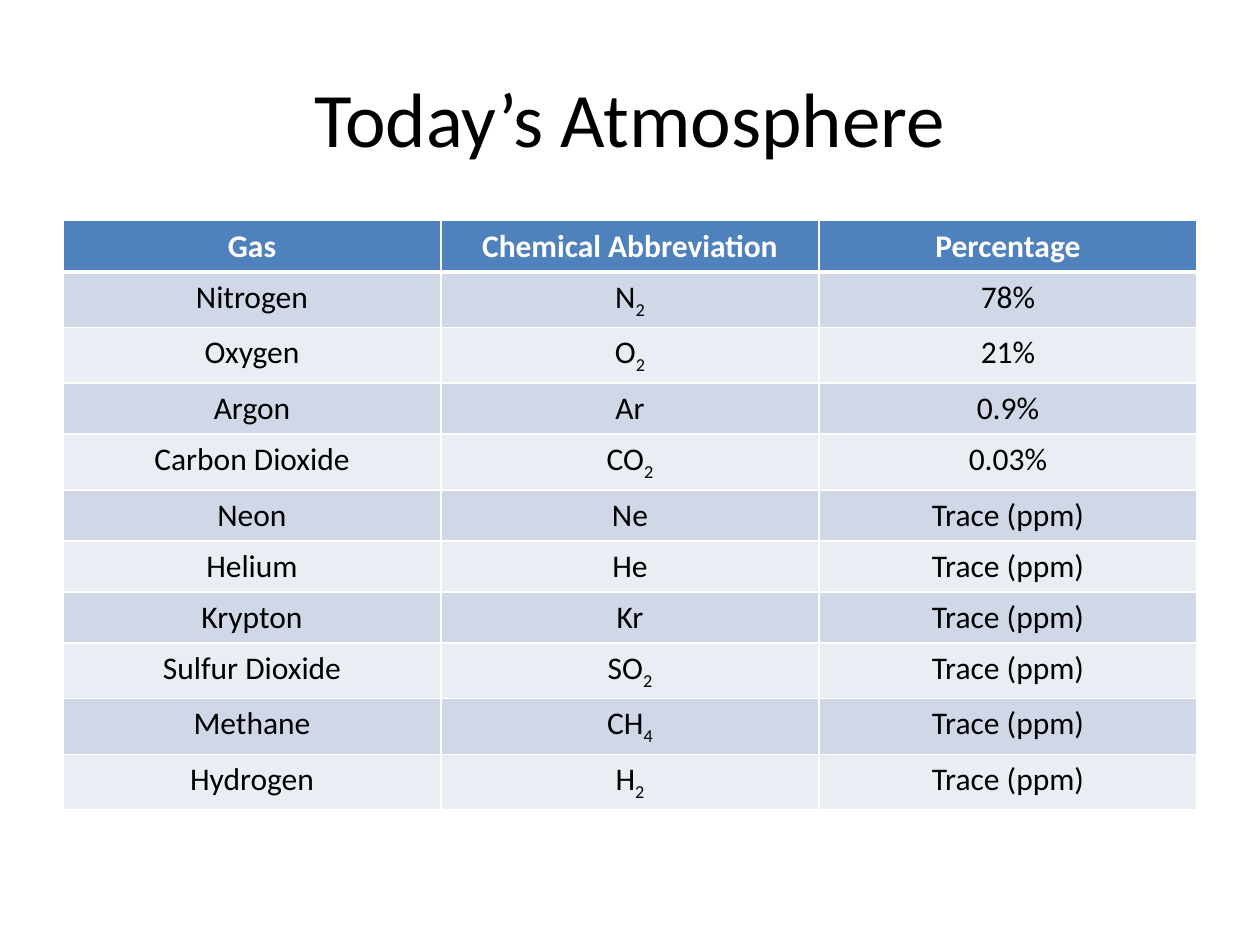
from itertools import groupby

from lxml import etree
from pptx import Presentation
from pptx import util as u
from pptx.dml.color import RGBColor
from pptx.enum import text
from pptx.oxml.ns import qn

FONT = "Calibri"
BLACK, WHITE = "000000", "FFFFFF"
HEAD, BANDS = "4F81BD", ("D0D8E8", "E9EDF4")

HEADINGS = ("Gas", "Chemical Abbreviation", "Percentage")
TRACE = "Trace (ppm)"
GASES = [
    ("Nitrogen", "N2", "78%"),
    ("Oxygen", "O2", "21%"),
    ("Argon", "Ar", "0.9%"),
    ("Carbon Dioxide", "CO2", "0.03%"),
    ("Neon", "Ne", TRACE),
    ("Helium", "He", TRACE),
    ("Krypton", "Kr", TRACE),
    ("Sulfur Dioxide", "SO2", TRACE),
    ("Methane", "CH4", TRACE),
    ("Hydrogen", "H2", TRACE),
]


def rgb(color):
    return RGBColor.from_string(color)


def write(tf, content, size=18, color=BLACK, bold=False, formula=False):
    """Write one centred line; in a formula the digits are subscripts."""
    p = tf.paragraphs[0]
    p.alignment = text.PP_ALIGN.CENTER
    parts = [(False, content)]
    if formula:
        parts = [(sub, "".join(g)) for sub, g in groupby(content, str.isdigit)]
    for sub, part in parts:
        r = p.add_run()
        r.text = part
        r.font.name, r.font.size, r.font.bold = FONT, u.Pt(size), bold
        r.font.color.rgb = rgb(color)
        if sub:
            r._r.get_or_add_rPr().set("baseline", "-25000")


def border(cell, **widths):
    """Draw white cell borders; widths in points by side (L, R, T, B)."""
    tcPr = cell._tc.get_or_add_tcPr()
    for side in "LRTB":
        width = u.Pt(widths.get(side, 1))
        ln = etree.SubElement(tcPr, qn(f"a:ln{side}"), w=str(width))
        fill = etree.SubElement(ln, qn("a:solidFill"))
        etree.SubElement(fill, qn("a:srgbClr"), val=WHITE)


def add_title(s, content, x, y, w, h):
    sp = s.shapes.add_textbox(u.Cm(x), u.Cm(y), u.Cm(w), u.Cm(h))
    tf = sp.text_frame
    tf.word_wrap = True
    tf.vertical_anchor = text.MSO_ANCHOR.MIDDLE
    write(tf, content, size=44)


def add_gas_table(s, x, y, w, h):
    rows = [HEADINGS] + GASES
    table = s.shapes.add_table(len(rows), len(HEADINGS), u.Cm(x), u.Cm(y),
                               u.Cm(w), u.Cm(h)).table
    for i, row in enumerate(rows):
        head = i == 0
        for j, content in enumerate(row):
            cell = table.cell(i, j)
            # A thicker rule parts the heading from the body
            border(cell, B=3 if head else 1, T=3 if i == 1 else 1)
            cell.fill.solid()
            cell.fill.fore_color.rgb = rgb(HEAD if head else BANDS[(i - 1) % 2])
            write(cell.text_frame, content, color=WHITE if head else BLACK,
                  bold=head, formula=j == 1 and not head)


def main():
    prs = Presentation()
    prs.slide_width, prs.slide_height = u.Cm(25.4), u.Cm(19.05)
    s = prs.slides.add_slide(prs.slide_layouts[6])
    add_title(s, "Today’s Atmosphere", 1.27, 0.76, 22.86, 3.18)
    add_gas_table(s, 1.27, 4.45, 22.86, 11.33)
    prs.save("out.pptx")


if __name__ == "__main__":
    main()
